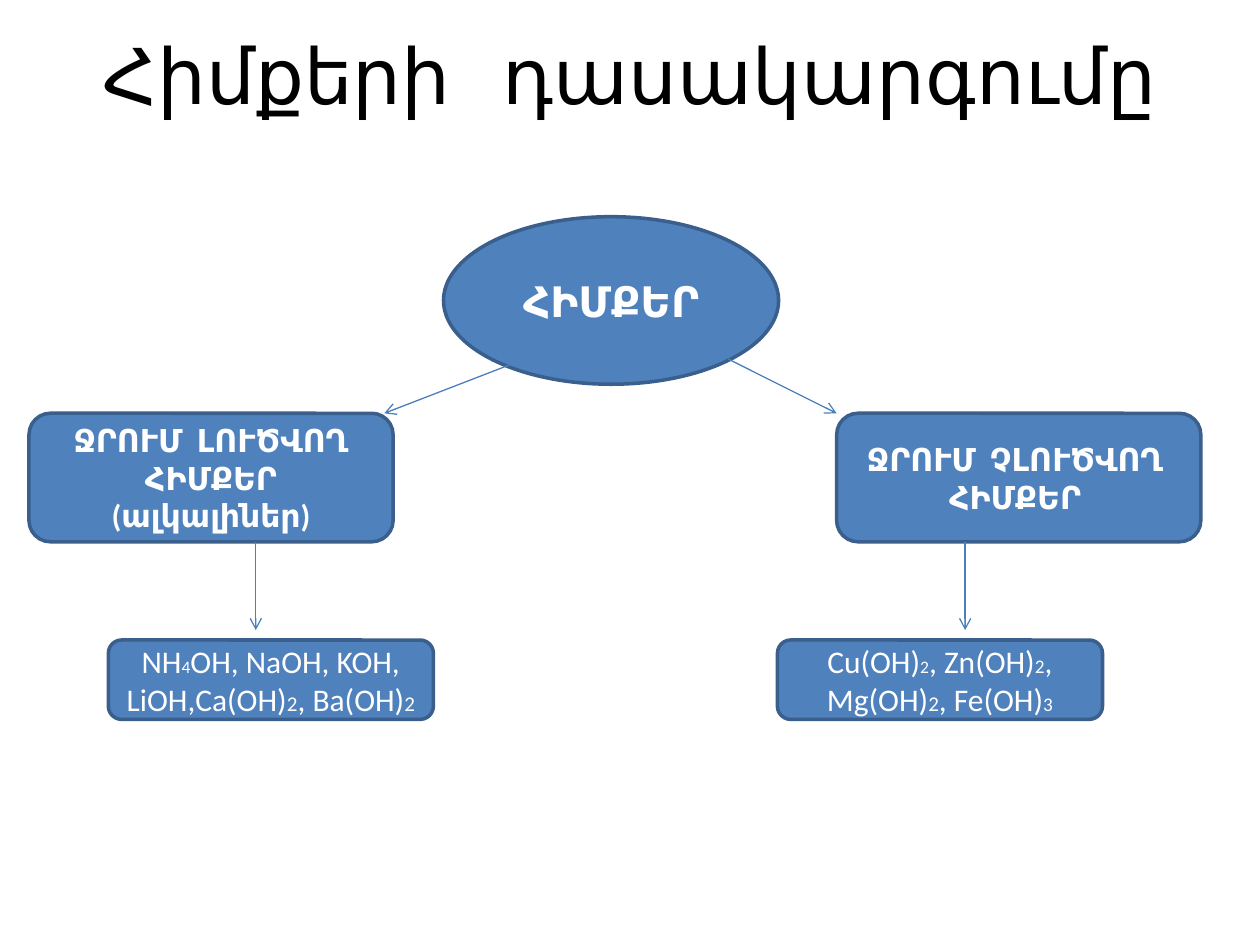
from lxml import etree
from pptx import Presentation
from pptx.dml.color import RGBColor
from pptx.enum.shapes import MSO_CONNECTOR, MSO_SHAPE
from pptx.enum.text import MSO_ANCHOR, PP_ALIGN
from pptx.oxml.ns import qn
from pptx.util import Inches, Pt

OVAL = MSO_SHAPE.OVAL
ROUNDED = MSO_SHAPE.ROUNDED_RECTANGLE
STRAIGHT = MSO_CONNECTOR.STRAIGHT
MIDDLE = MSO_ANCHOR.MIDDLE
CENTER = PP_ALIGN.CENTER

FONT = "Calibri"
COLORS = {
    "title": "000000",
    "fill": "4F81BD",
    "border": "3A5F8C",
    "arrow": "4B7EBC",
    "label": "FFFFFF",
}
CLASS_SIZE = (2.89, 1.02)
FORMULA_SIZE = (2.58, 0.63)
CLASS_TOP = 3.28
FORMULA_TOP = 5.08
ARROW_END = 5

BRANCHES = [
    {
        "class_left": 0.23,
        "formula_left": 0.86,
        "label": "ՋՐՈՒՄ  ԼՈՒԾՎՈՂ ՀԻՄՔԵՐ (ալկալիներ)",
        "formulas": [("NH", 18), ("4", 10), ("OH, NaOH, KOH, LiOH,Ca(OH)", 18),
                     ("2", 12), (", Ba(OH)", 18), ("2", 12)],
        "root_arrow": ((4.06, 2.89), (3.05, CLASS_TOP)),
        "arrow_x": 2.03,
    },
    {
        "class_left": 6.64,
        "formula_left": 6.17,
        "label": "ՋՐՈՒՄ  ՉԼՈՒԾՎՈՂ  ՀԻՄՔԵՐ ",
        "formulas": [("Cu(OH)", 18), ("2", 10), (", Zn(OH)", 18), ("2", 11),
                     (", Mg(OH)", 18), ("2", 12), (", Fe(OH)", 18), ("3", 11)],
        "root_arrow": ((5.78, 2.85), (6.64, CLASS_TOP)),
        "arrow_x": 7.66,
    },
]


def color(name):
    return RGBColor.from_string(COLORS[name])


def write_text(shape, pieces, color_name, bold=False):
    frame = shape.text_frame
    frame.word_wrap = True
    frame.vertical_anchor = MIDDLE
    para = frame.paragraphs[0]
    para.alignment = CENTER
    for text, size in pieces:
        span = para.add_run()
        span.text = text
        span.font.name = FONT
        span.font.size = Pt(size)
        span.font.bold = bold
        span.font.color.rgb = color(color_name)


def add_title(page, box):
    title = page.shapes.add_textbox(*map(Inches, box))
    write_text(title, [("Հիմքերի   դասակարգումը", 44)], "title")


def add_node(page, kind, box, pieces, bold=False):
    node = page.shapes.add_shape(kind, *map(Inches, box))
    node.shadow.inherit = False
    node.fill.solid()
    node.fill.fore_color.rgb = color("fill")
    node.line.color.rgb = color("border")
    node.line.width = Pt(2)
    write_text(node, pieces, "label", bold)


def add_arrow(page, start, end):
    arrow = page.shapes.add_connector(STRAIGHT, *map(Inches, (*start, *end)))
    arrow.line.color.rgb = color("arrow")
    arrow.line.width = Pt(0.75)
    properties = arrow.element.spPr
    outline = properties.find(qn("a:ln"))
    etree.SubElement(outline, qn("a:tailEnd"), type="arrow")
    etree.SubElement(properties, qn("a:effectLst"))


def add_branch(page, branch):
    class_box = (branch["class_left"], CLASS_TOP, *CLASS_SIZE)
    formula_box = (branch["formula_left"], FORMULA_TOP, *FORMULA_SIZE)
    add_node(page, ROUNDED, class_box, [(branch["label"], 18)], bold=True)
    add_node(page, ROUNDED, formula_box, branch["formulas"])
    add_arrow(page, *branch["root_arrow"])
    x = branch["arrow_x"]
    add_arrow(page, (x, CLASS_TOP + CLASS_SIZE[1]), (x, ARROW_END))


def main():
    deck = Presentation()
    deck.slide_width = Inches(10)
    deck.slide_height = Inches(7.5)
    page = deck.slides.add_slide(deck.slide_layouts[6])
    add_title(page, (0.5, 0, 9, 1.17))
    add_node(page, OVAL, (3.52, 1.72, 2.66, 1.33), [("ՀԻՄՔԵՐ", 24)], bold=True)
    for branch in BRANCHES:
        add_branch(page, branch)
    deck.save("out.pptx")


if __name__ == "__main__":
    main()
